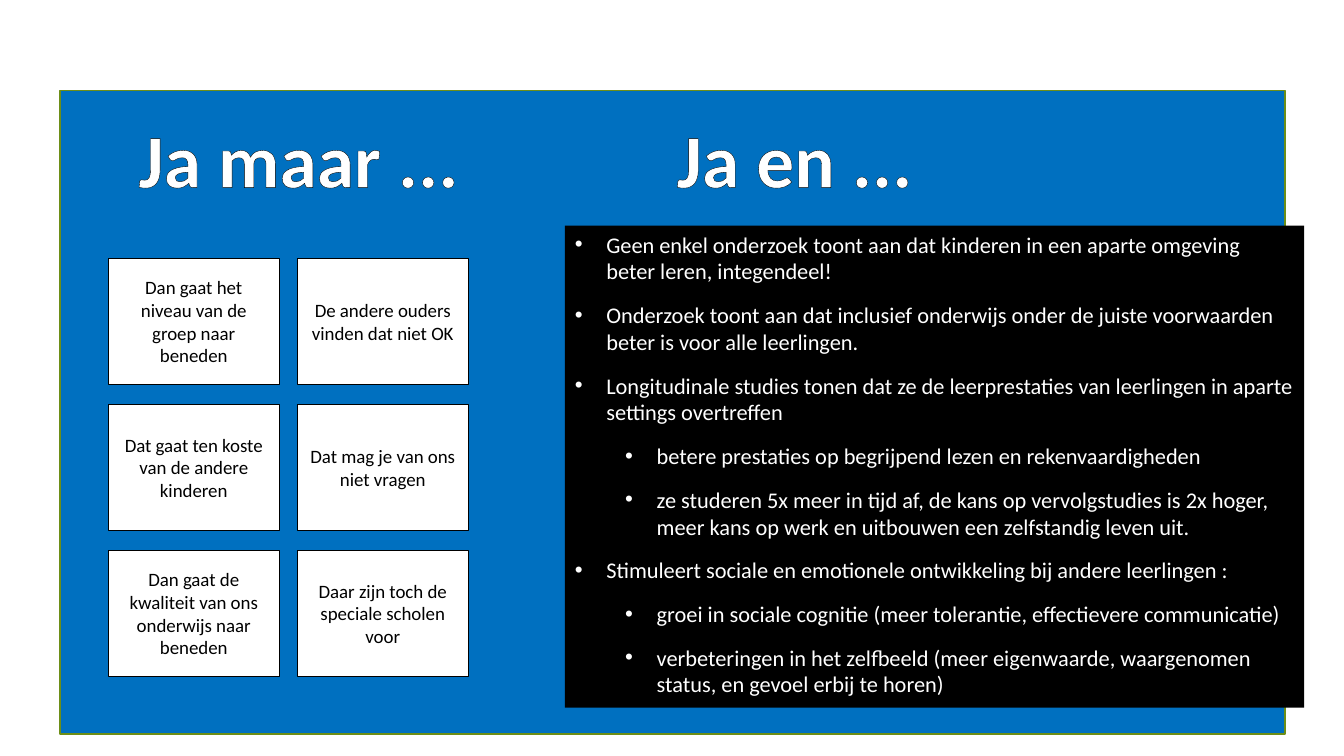
from lxml.etree import SubElement as Sub
from pptx import Presentation
from pptx.dml.color import RGBColor
from pptx.enum.shapes import MSO_SHAPE as Geo
from pptx.enum.text import MSO_ANCHOR as Anchor, MSO_AUTO_SIZE as Auto, PP_ALIGN as Align
from pptx.oxml import parse_xml
from pptx.oxml.ns import nsdecls, qn
from pptx.util import Pt

PX = 9525  # EMU per px, 96 px to the inch
FACE = "Calibri"
WHITE = RGBColor(0xFF, 0xFF, 0xFF)
BLACK = RGBColor(0, 0, 0)
BLUE = RGBColor(0x00, 0x70, 0xC0)
GREEN = RGBColor(0x6D, 0x8E, 0x17)

# Objections, row by row
CARDS = [
    ("Dan gaat het niveau van de groep naar beneden",
     "De andere ouders vinden dat niet OK"),
    ("Dat gaat ten koste van de andere kinderen",
     "Dat mag je van ons niet vragen"),
    ("Dan gaat de kwaliteit van ons onderwijs naar beneden",
     "Daar zijn toch de speciale scholen voor"),
]

# Answers, each with its outline level
POINTS = [
    (0, "Geen enkel onderzoek toont aan dat kinderen in een aparte omgeving beter leren, integendeel!"),
    (0, "Onderzoek toont aan dat inclusief onderwijs onder de juiste voorwaarden beter is voor alle leerlingen."),
    (0, "Longitudinale studies tonen dat ze de leerprestaties van leerlingen in aparte settings overtreffen"),
    (1, "betere prestaties op begrijpend lezen en rekenvaardigheden"),
    (1, "ze studeren 5x meer in tijd af, de kans op vervolgstudies is 2x hoger, "
        "meer kans op werk en uitbouwen een zelfstandig leven uit."),
    (0, "Stimuleert sociale en emotionele ontwikkeling bij andere leerlingen :"),
    (1, "groei in sociale cognitie (meer tolerantie, effectievere communicatie)"),
    (1, "verbeteringen in het zelfbeeld (meer eigenwaarde, waargenomen status, en gevoel erbij te horen)"),
]


def emu(box):
    return [n * PX for n in box]


def style(para, size, color, align, bold=False):
    para.alignment = align
    font = para.font
    font.name, font.size, font.bold = FACE, Pt(size), bold
    font.color.rgb = color


def block(slide, box, fill, line=None, width=1):
    rect = slide.shapes.add_shape(Geo.RECTANGLE, *emu(box))
    rect.shadow.inherit = False
    rect.fill.solid()
    rect.fill.fore_color.rgb = fill
    if line is None:
        rect.line.fill.background()
    else:
        rect.line.color.rgb = line
        rect.line.width = Pt(width)
    return rect


def title(slide, box, text):
    frame = slide.shapes.add_textbox(*emu(box)).text_frame
    frame.word_wrap = False
    frame.auto_size = Auto.SHAPE_TO_FIT_TEXT
    para = frame.paragraphs[0]
    run = para.add_run()
    run.text = text
    style(para, 54, WHITE, Align.CENTER, True)
    # Black outline around the letters
    run._r.get_or_add_rPr().insert(0, parse_xml(
        f'<a:ln {nsdecls("a")} w="12700"><a:solidFill>'
        f'<a:srgbClr val="{BLACK}"/></a:solidFill></a:ln>'))


def cards(slide, box):
    left, top, wide, high = box
    w, h = 163, 120
    across = (wide - w) // (len(CARDS[0]) - 1)
    down = (high - h) // (len(CARDS) - 1)
    for r, row in enumerate(CARDS):
        for c, text in enumerate(row):
            spot = left + c * across, top + r * down, w, h
            frame = block(slide, spot, WHITE, BLACK, 0.5).text_frame
            frame.word_wrap = True
            frame.vertical_anchor = Anchor.MIDDLE
            para = frame.paragraphs[0]
            para.text = text
            style(para, 13.5, BLACK, Align.CENTER)


def points(slide, box):
    frame = block(slide, box, BLACK).text_frame
    frame.word_wrap = True
    frame.auto_size = Auto.SHAPE_TO_FIT_TEXT
    frame.vertical_anchor = Anchor.TOP
    for i, (level, text) in enumerate(POINTS):
        para = frame.add_paragraph() if i else frame.paragraphs[0]
        para.text = text
        para.level = level
        props = para._p.get_or_add_pPr()
        props.set("marL", str((30 + 48 * level) * PX))
        props.set("indent", str(-30 * PX))
        Sub(props, qn("a:buFont"), typeface="Arial")
        Sub(props, qn("a:buChar"), char="•")
        if i:
            para.space_before = Pt(12)
        style(para, 16, WHITE, Align.LEFT)


def main():
    deck = Presentation()
    deck.slide_width, deck.slide_height = emu((1280, 720))
    slide = deck.slides.add_slide(deck.slide_layouts[6])

    # Blue panel
    block(slide, (57, 86, 1167, 613), BLUE, GREEN)

    # Left side: objections
    title(slide, (121, 102, 327, 97), "Ja maar ...")
    cards(slide, (103, 246, 343, 398))

    # Right side: answers
    points(slide, (538, 215, 704, 459))
    title(slide, (634, 102, 262, 97), "Ja en ... ")

    deck.save("out.pptx")


if __name__ == "__main__":
    main()
